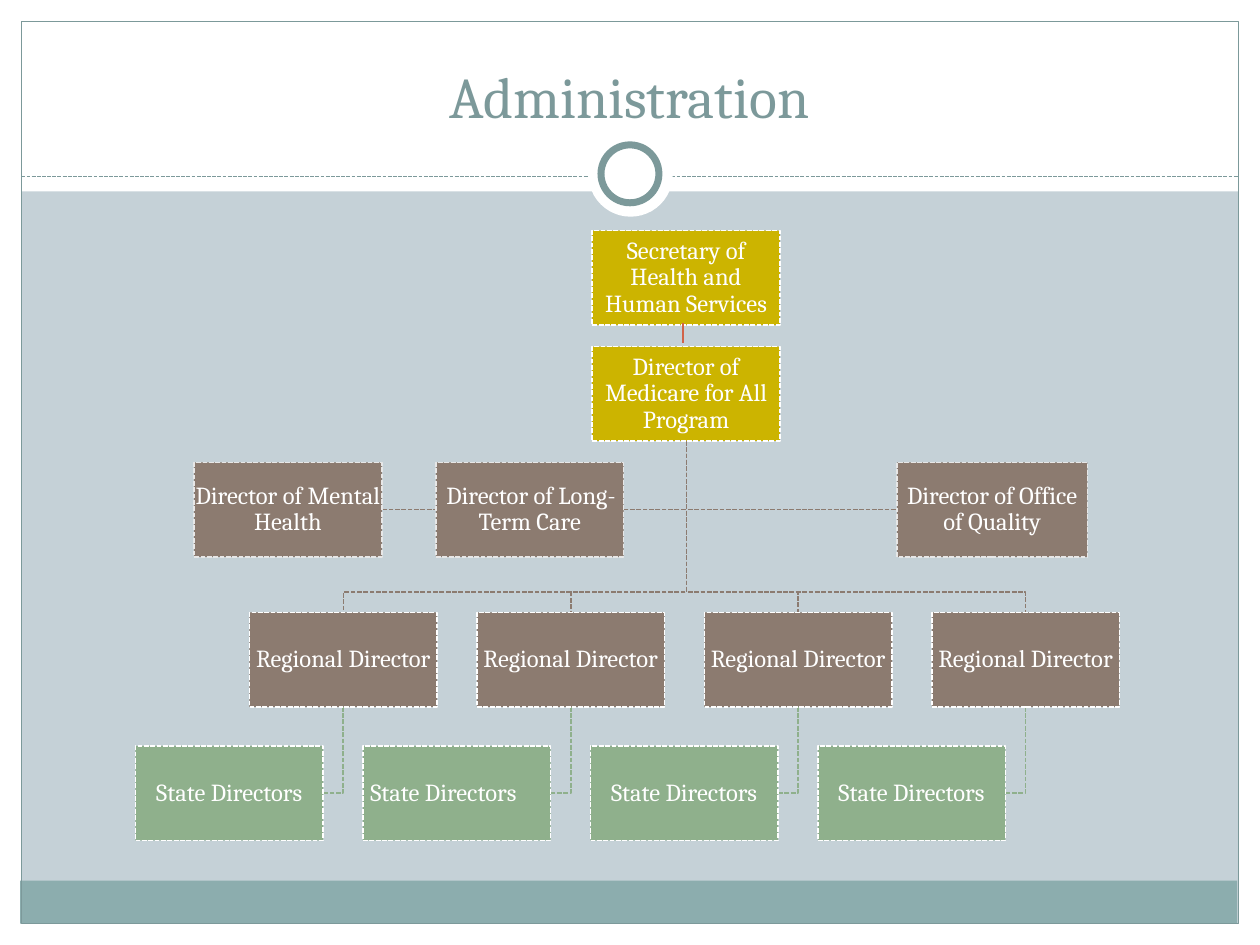
import dataclasses

import pptx
import pptx.dml.color
import pptx.enum.dml
import pptx.enum.shapes
import pptx.enum.text
import pptx.oxml.ns
import pptx.util
from lxml import etree
from pptx.util import Inches

SHAPES = pptx.enum.shapes.MSO_SHAPE
ANCHORS = pptx.enum.text.MSO_ANCHOR
DASH = pptx.enum.dml.MSO_LINE.SQUARE_DOT


@dataclasses.dataclass(frozen=True)
class Theme:
    """Colours, typeface and type sizes of the slide."""
    background: str = "C5D1D7"
    white: str = "FFFFFF"
    accent: str = "7C999A"
    footer: str = "8CADAE"
    executive: str = "CCB400"
    director: str = "8C7B70"
    state: str = "8FB08C"
    staff_border: str = "E7E7E7"
    link: str = "D16349"
    font: str = "Cambria"
    title_size: int = 33
    box_size: int = 14


THEME = Theme()
BOX_WIDTH, BOX_HEIGHT = 1.49, 0.75
TRUNK_X, TRUNK_TOP = 5.45, 3.5
EXECUTIVE_LEFT = 4.7
STAFF_TOP, REGION_TOP, STATE_TOP = 3.67, 4.86, 5.92
BUS_Y = 4.7
REGION_LEFT, REGION_PITCH, REGION_COUNT = 1.98, 1.805, 4
STATE_OFFSET = 0.905


def rgb(value):
    """Turn a hex string into a colour."""
    return pptx.dml.color.RGBColor.from_string(value)


def style_line(line, color, width, dashed=False):
    """Set colour, width and dash of a line."""
    line.color.rgb = rgb(color)
    line.width = pptx.util.Pt(width)
    if dashed:
        line.dash_style = DASH


def add_block(slide, kind, bounds, fill=None, border=None, width=0.75, dashed=False):
    """Add a preset shape with optional fill and border."""
    shape = slide.shapes.add_shape(kind, *map(Inches, bounds))
    shape.shadow.inherit = False
    if fill:
        shape.fill.solid()
        shape.fill.fore_color.rgb = rgb(fill)
    else:
        shape.fill.background()
    if border:
        style_line(shape.line, border, width, dashed)
    else:
        shape.line.fill.background()
    return shape


def add_straight(slide, start, end, color, dashed=False):
    """Add a straight connector without a shadow."""
    connector = slide.shapes.add_connector(
        pptx.enum.shapes.MSO_CONNECTOR.STRAIGHT, *map(Inches, start + end))
    style_line(connector.line, color, 0.75, dashed)
    properties = connector._element.spPr
    etree.SubElement(properties, pptx.oxml.ns.qn("a:effectLst"))


def add_branch(slide, points, color):
    """Add an open, dashed, right-angled branch through the points."""
    corners = [(Inches(x), Inches(y)) for x, y in points]
    builder = slide.shapes.build_freeform(*corners[0])
    builder.add_line_segments(corners[1:], close=False)
    branch = builder.convert_to_shape()
    branch.shadow.inherit = False
    branch.fill.background()
    style_line(branch.line, color, 0.9, dashed=True)


def write_text(shape, text, size, color, anchor):
    """Write one centred paragraph into a shape."""
    frame = shape.text_frame
    frame.word_wrap = True
    frame.vertical_anchor = anchor
    paragraph = frame.paragraphs[0]
    paragraph.text = text
    paragraph.alignment = pptx.enum.text.PP_ALIGN.CENTER
    paragraph.font.name = THEME.font
    paragraph.font.size = pptx.util.Pt(size)
    paragraph.font.color.rgb = rgb(color)
    return frame


def add_box(slide, text, left, top, fill, border=THEME.white, width=BOX_WIDTH, right_inset=0.01):
    """Add one box of the organisation chart."""
    box = add_block(slide, SHAPES.RECTANGLE, (left, top, width, BOX_HEIGHT),
                    fill, border, 0.9, dashed=True)
    frame = write_text(box, text, THEME.box_size, THEME.white, ANCHORS.MIDDLE)
    frame.paragraphs[0].line_spacing = 0.9
    frame.margin_left = frame.margin_top = frame.margin_bottom = Inches(0.01)
    frame.margin_right = Inches(right_inset)


def add_decor(slide):
    """Add the white margins, the frame, the divider and the ring."""
    for bounds, fill in (
        ((0, 7.33, 10, 0.17), THEME.white),
        ((0, 0, 10, 1.52), THEME.white),
        ((0, 0, 0.17, 7.5), THEME.white),
        ((9.83, 0, 0.17, 7.5), THEME.white),
        ((0.16, 6.99, 9.66, 0.34), THEME.footer),
    ):
        add_block(slide, SHAPES.RECTANGLE, bounds, fill)
    add_block(slide, SHAPES.RECTANGLE, (0.17, 0.17, 9.66, 7.16), border=THEME.accent)
    add_straight(slide, (0.17, 1.4), (9.83, 1.4), THEME.accent, dashed=True)
    add_block(slide, SHAPES.OVAL, (4.67, 1.05, 0.67, 0.67), THEME.white)
    add_block(slide, SHAPES.OVAL, (4.77, 1.15, 0.46, 0.46), THEME.white, THEME.accent, 4)


def add_title(slide, text):
    """Add the slide title."""
    title = slide.shapes.add_textbox(*map(Inches, (0.33, 0.25, 9.33, 0.83)))
    write_text(title, text, THEME.title_size, THEME.accent, ANCHORS.BOTTOM)


def add_branches(slide, region_lefts):
    """Add the branches to staff, regional and state directors."""
    trunk = (TRUNK_X, TRUNK_TOP)
    staff_y = STAFF_TOP + BOX_HEIGHT / 2
    for x in (3.04, 7.12, 4.95):
        add_branch(slide, [trunk, (TRUNK_X, staff_y), (x, staff_y)], THEME.director)
    state_y = STATE_TOP + BOX_HEIGHT / 2
    for left in region_lefts:
        center = left + BOX_WIDTH / 2
        state_right = left - STATE_OFFSET + BOX_WIDTH
        add_branch(slide, [(center, REGION_TOP + BOX_HEIGHT), (center, state_y),
                           (state_right, state_y)], THEME.state)
        add_branch(slide, [trunk, (TRUNK_X, BUS_Y), (center, BUS_Y),
                           (center, REGION_TOP)], THEME.director)


def add_boxes(slide, region_lefts):
    """Add the boxes of every level."""
    for text, top in (("Secretary of Health and Human Services", 1.83),
                      ("Director of Medicare for All Program", 2.75)):
        add_box(slide, text, EXECUTIVE_LEFT, top, THEME.executive)
    for index, left in enumerate(region_lefts):
        add_box(slide, "Regional Director", left, REGION_TOP, THEME.director)
        add_box(slide, "State Directors", left - STATE_OFFSET, STATE_TOP, THEME.state,
                right_inset=0.22 if index == 1 else 0.01)
    for text, left, width in (("Director of Long-Term Care", 3.46, BOX_WIDTH),
                              ("Director of Office of Quality", 7.12, 1.51),
                              ("Director of Mental Health", 1.54, BOX_WIDTH)):
        add_box(slide, text, left, STAFF_TOP, THEME.director, THEME.staff_border, width)


def main():
    """Build the slide and save it."""
    presentation = pptx.Presentation()
    presentation.slide_width = Inches(10)
    presentation.slide_height = Inches(7.5)
    slide = presentation.slides.add_slide(presentation.slide_layouts[6])
    slide.background.fill.solid()
    slide.background.fill.fore_color.rgb = rgb(THEME.background)
    region_lefts = [REGION_LEFT + index * REGION_PITCH for index in range(REGION_COUNT)]
    add_decor(slide)
    add_title(slide, "Administration")
    add_branches(slide, region_lefts)
    add_boxes(slide, region_lefts)
    add_straight(slide, (5.42, 2.56), (5.42, 2.72), THEME.link)
    presentation.save("out.pptx")


if __name__ == "__main__":
    main()
